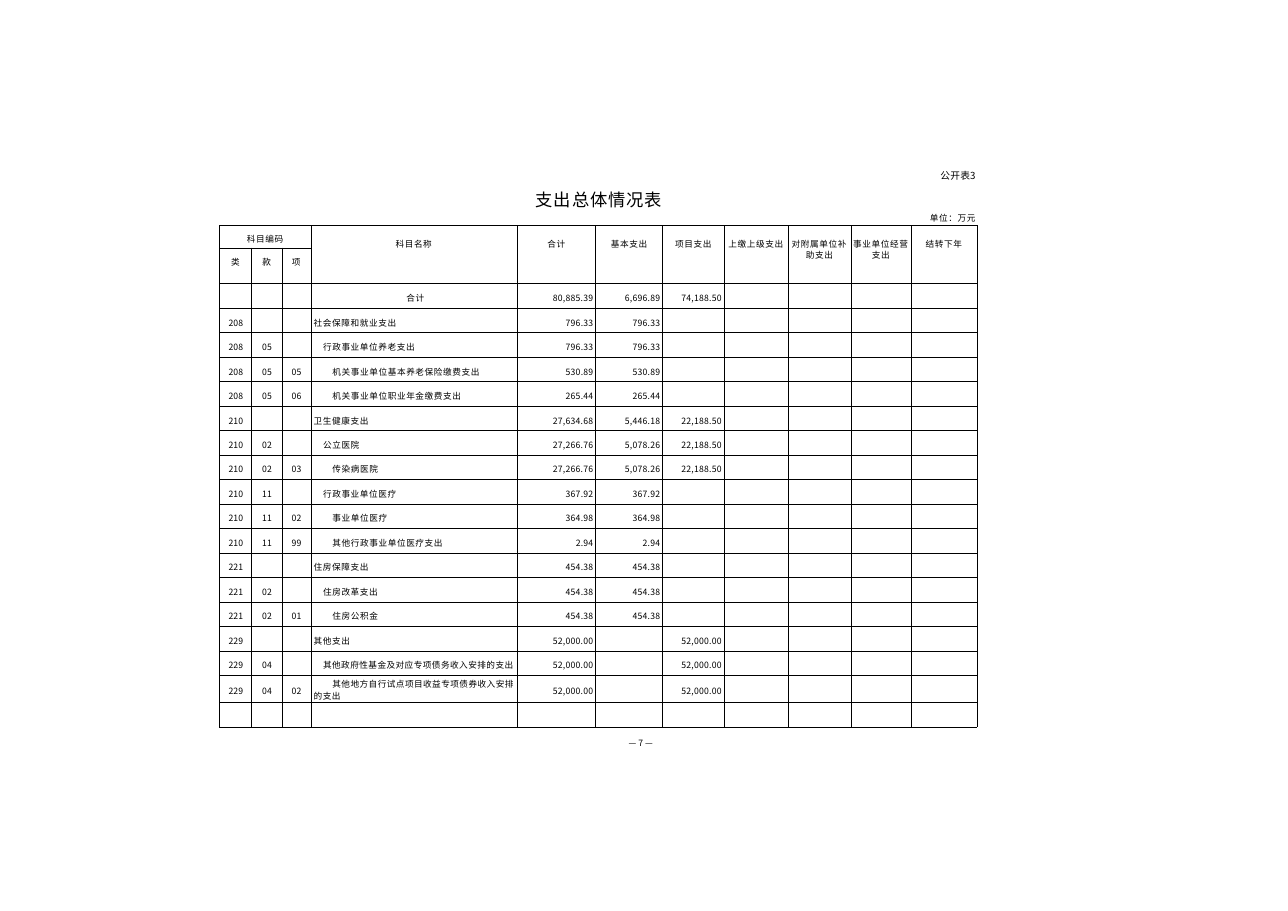
from lxml import etree
from pptx import Presentation
from pptx import util as u
from pptx.dml.color import RGBColor
from pptx.enum import text as t
from pptx.oxml import ns

FONT, INK = "Noto Sans CJK SC", "000000"
LEFT, CENTER, RIGHT = t.PP_ALIGN.LEFT, t.PP_ALIGN.CENTER, t.PP_ALIGN.RIGHT
TOP, MIDDLE = t.MSO_ANCHOR.TOP, t.MSO_ANCHOR.MIDDLE


def write(holder, content, size=8, align=LEFT, anchor=MIDDLE, spacing=0.5,
          margins=(0, 0, 0), indent=0, line=0.94):
    """Fill a cell or text frame; margins are left, top and right in inches."""
    holder.margin_left, holder.margin_top, holder.margin_right = map(u.Inches, margins)
    holder.margin_bottom = 0
    holder.vertical_anchor = anchor
    frame = getattr(holder, "text_frame", holder)
    frame.word_wrap = True
    paragraph = frame.paragraphs[0]
    paragraph.alignment, paragraph.line_spacing = align, line
    if indent:
        paragraph._p.get_or_add_pPr().set("indent", str(u.Inches(indent)))
    if not content:
        paragraph._p.get_or_add_endParaRPr().set("sz", str(size * 100))
        return
    run = paragraph.add_run()
    run.text = content
    run.font.size, run.font.name = u.Pt(size), FONT
    run.font.color.rgb = RGBColor.from_string(INK)
    props = run._r.get_or_add_rPr()
    props.set("spc", str(round(spacing * 100)))
    etree.SubElement(props, ns.qn("a:ea"), typeface=FONT)


def frame_cell(cell):
    """Clear the fill and draw thin black borders on all sides."""
    cell.fill.background()
    props = cell._tc.get_or_add_tcPr()
    for i, side in enumerate(("lnL", "lnR", "lnT", "lnB")):
        border = etree.Element(ns.qn(f"a:{side}"), w=str(u.Pt(0.25)))
        fill = etree.SubElement(border, ns.qn("a:solidFill"))
        etree.SubElement(fill, ns.qn("a:srgbClr"), val=INK)
        props.insert(i, border)


deck = Presentation()
deck.slide_width, deck.slide_height = u.Pt(1191), u.Pt(842)
slide = deck.slides.add_slide(deck.slide_layouts[5])

# Title
title = slide.shapes.title
title.left, title.top, title.width, title.height = map(u.Inches, (6.88, 2.4, 3, 0.32))
write(title.text_frame, "支出总体情况表", size=16, spacing=0.9, line=1)

# Table number, unit and page number
for label, x, y, width, size, align, spacing in (
        ("公开表3", 10.53, 2.16, 2, 9, RIGHT, 0.2),
        ("单位：万元", 10.53, 2.7, 2, 8, RIGHT, 0.5),
        ("— 7 —", 7.73, 9.44, 1, 8, CENTER, 0)):
    box = slide.shapes.add_textbox(*map(u.Inches, (x, y, width, 0.2)))
    write(box.text_frame, label, size=size, align=align, spacing=spacing)

# Expenditure data: codes, name, total, basic, project
expenditures = (
    ("", "合计", "80,885.39", "6,696.89", "74,188.50"),
    ("208", "社会保障和就业支出", "796.33", "796.33", ""),
    ("208 05", "行政事业单位养老支出", "796.33", "796.33", ""),
    ("208 05 05", "机关事业单位基本养老保险缴费支出", "530.89", "530.89", ""),
    ("208 05 06", "机关事业单位职业年金缴费支出", "265.44", "265.44", ""),
    ("210", "卫生健康支出", "27,634.68", "5,446.18", "22,188.50"),
    ("210 02", "公立医院", "27,266.76", "5,078.26", "22,188.50"),
    ("210 02 03", "传染病医院", "27,266.76", "5,078.26", "22,188.50"),
    ("210 11", "行政事业单位医疗", "367.92", "367.92", ""),
    ("210 11 02", "事业单位医疗", "364.98", "364.98", ""),
    ("210 11 99", "其他行政事业单位医疗支出", "2.94", "2.94", ""),
    ("221", "住房保障支出", "454.38", "454.38", ""),
    ("221 02", "住房改革支出", "454.38", "454.38", ""),
    ("221 02 01", "住房公积金", "454.38", "454.38", ""),
    ("229", "其他支出", "52,000.00", "", "52,000.00"),
    ("229 04", "其他政府性基金及对应专项债务收入安排的支出", "52,000.00", "", "52,000.00"),
    ("229 04 02", "其他地方自行试点项目收益专项债券收入安排的支出", "52,000.00", "", "52,000.00"),
    ("", "", "", "", ""),
)

# Table grid
column_widths = (0.41, 0.39, 0.37, 2.65, 1.01, 0.86, 0.79, 0.82, 0.81, 0.77, 0.85)
row_heights = [0.29, 0.46] + [5.03 / 16] * 16 + [0.35, 0.32]
table = slide.shapes.add_table(
    len(row_heights), len(column_widths), u.Inches(2.82), u.Inches(2.89),
    u.Inches(sum(column_widths)), u.Inches(sum(row_heights))).table
table.first_row = table.horz_banding = False
for column, width in zip(table.columns, column_widths):
    column.width = u.Inches(width)
for row, height in zip(table.rows, row_heights):
    row.height = u.Inches(height)
for cell in table.iter_cells():
    frame_cell(cell)
    write(cell, "")

# Header
table.cell(0, 0).merge(table.cell(0, 2))
write(table.cell(0, 0), "科目编码", align=CENTER, anchor=TOP, margins=(0, 0.1, 0))
for col, heading in enumerate(("类", "款", "项")):
    write(table.cell(1, col), heading, align=CENTER, anchor=TOP, margins=(0, 0.11, 0))
headings = ("科目名称", "合计", "基本支出", "项目支出", "上缴上级支出",
            "对附属单位补助支出", "事业单位经营支出", "结转下年")
for col, heading in enumerate(headings, start=3):
    table.cell(0, col).merge(table.cell(1, col))
    write(table.cell(0, col), heading, align=CENTER, anchor=TOP, margins=(0, 0.16, 0))

# Body
for row, (codes, name, *amounts) in enumerate(expenditures, start=2):
    codes = codes.split()
    for col, code in enumerate(codes):
        write(table.cell(row, col), code, align=CENTER, spacing=0.1, margins=(0.01, 0.06, 0))
    is_long = len(name) > 20
    write(table.cell(row, 3), name, align=LEFT if codes else CENTER,
          spacing=0.38 if is_long else 0.5,
          margins=(0.04, 0.04 if is_long else 0.06, 0),
          indent=0.12 * max(len(codes) - 1, 0))
    for col, amount in enumerate(amounts, start=4):
        write(table.cell(row, col), amount, align=RIGHT, spacing=0.2, margins=(0, 0.06, 0.03))

deck.save("out.pptx")
